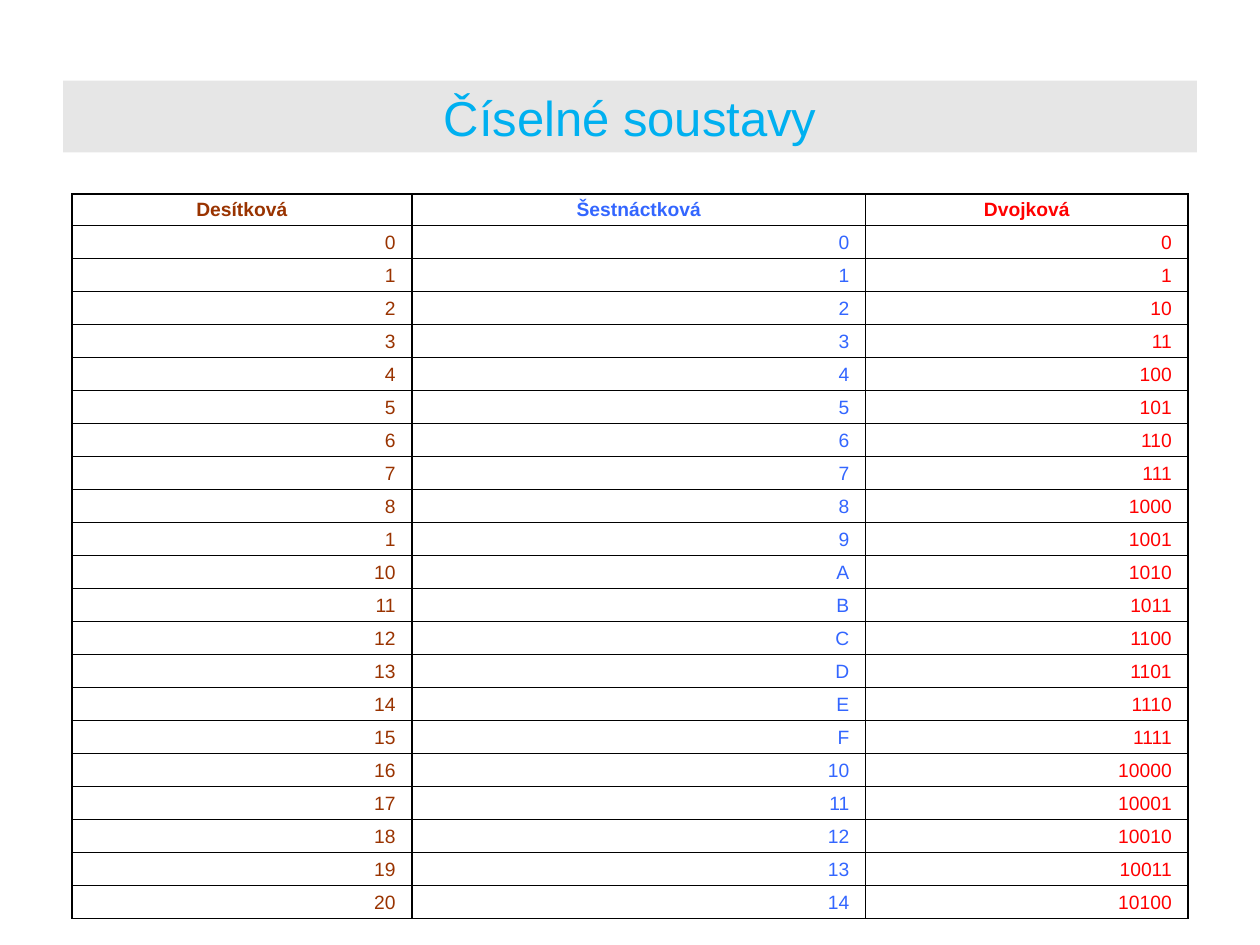
"""Build a slide comparing decimal, hexadecimal and binary numbers."""
from dataclasses import dataclass
from typing import Callable

import lxml.etree
import pptx
import pptx.dml.color
import pptx.enum.text
import pptx.oxml.ns
import pptx.table
import pptx.text.text
import pptx.util

Inches = pptx.util.Inches
RGBColor = pptx.dml.color.RGBColor
Align = pptx.enum.text.PP_ALIGN
Anchor = pptx.enum.text.MSO_ANCHOR

BROWN = RGBColor(0x99, 0x33, 0x00)
BLUE = RGBColor(0x33, 0x66, 0xFF)
RED = RGBColor(0xFF, 0x00, 0x00)
SKY = RGBColor(0x00, 0xB0, 0xF0)
GREY = RGBColor(0xE6, 0xE6, 0xE6)
BLACK = RGBColor(0x00, 0x00, 0x00)

LAST_NUMBER = 20
TABLE_HEIGHT = 5.75
HEADER_HEIGHT = 0.25


@dataclass(frozen=True)
class NumeralSystem:
    """A column of the table: one way to write numbers."""
    heading: str
    width: float
    color: RGBColor
    numeral: Callable[[int], str]


SYSTEMS = (
    NumeralSystem("Desítková", 2.7, BROWN, lambda n: "1" if n == 9 else str(n)),
    NumeralSystem("Šestnáctková", 3.6, BLUE, lambda n: format(n, "X")),
    NumeralSystem("Dvojková", 2.56, RED, lambda n: format(n, "b")),
)


def write_text(frame: pptx.text.text.TextFrame, text: str, *, size: float,
               color: RGBColor, align: Align, bold: bool = False) -> None:
    """Write one formatted paragraph into a text frame."""
    paragraph = frame.paragraphs[0]
    paragraph.alignment = align
    run = paragraph.add_run()
    run.text = text
    run.font.name = "Arial"
    run.font.size = pptx.util.Pt(size)
    run.font.bold = bold
    run.font.color.rgb = color


def add_borders(cell: pptx.table._Cell) -> None:
    """Give a cell thin black lines on all four sides."""
    qn = pptx.oxml.ns.qn
    properties = cell._tc.get_or_add_tcPr()
    for position, side in enumerate(("a:lnL", "a:lnR", "a:lnT", "a:lnB")):
        line = lxml.etree.Element(qn(side), w=str(pptx.util.Pt(1)))
        fill = lxml.etree.SubElement(line, qn("a:solidFill"))
        lxml.etree.SubElement(fill, qn("a:srgbClr"), val=str(BLACK))
        properties.insert(position, line)


def fill_cell(cell: pptx.table._Cell, text: str, system: NumeralSystem,
              heading: bool) -> None:
    """Format a cell and write a heading or a numeral in it."""
    cell.fill.background()
    cell.vertical_anchor = Anchor.BOTTOM
    cell.margin_left = cell.margin_right = Inches(0.13)
    cell.margin_top, cell.margin_bottom = Inches(0.02), Inches(0.04)
    write_text(cell.text_frame, text, size=11, color=system.color, bold=heading,
               align=Align.CENTER if heading else Align.RIGHT)
    add_borders(cell)


def main() -> None:
    """Create and save the presentation."""
    deck = pptx.Presentation()
    deck.slide_width, deck.slide_height = Inches(10), Inches(7.5)
    slide = deck.slides.add_slide(deck.slide_layouts.get_by_name("Title Only"))

    title = slide.shapes.title
    title.left, title.top = Inches(0.5), Inches(0.64)
    title.width, title.height = Inches(9), Inches(0.57)
    title.fill.solid()
    title.fill.fore_color.rgb = GREY
    title.text_frame.vertical_anchor = Anchor.MIDDLE
    title.text_frame.auto_size = pptx.enum.text.MSO_AUTO_SIZE.NONE
    write_text(title.text_frame, "Číselné soustavy", size=28, color=SKY,
               align=Align.CENTER)

    numbers = range(LAST_NUMBER + 1)
    table = slide.shapes.add_table(
        len(numbers) + 1, len(SYSTEMS), Inches(0.57), Inches(1.54),
        Inches(sum(system.width for system in SYSTEMS)), Inches(TABLE_HEIGHT)).table
    table.first_row = table.horz_banding = False
    for row in table.rows:
        row.height = Inches((TABLE_HEIGHT - HEADER_HEIGHT) / len(numbers))
    table.rows[0].height = Inches(HEADER_HEIGHT)

    for column, system in enumerate(SYSTEMS):
        table.columns[column].width = Inches(system.width)
        fill_cell(table.cell(0, column), system.heading, system, heading=True)
        for number in numbers:
            fill_cell(table.cell(number + 1, column), system.numeral(number),
                      system, heading=False)

    deck.save("out.pptx")


if __name__ == "__main__":
    main()
